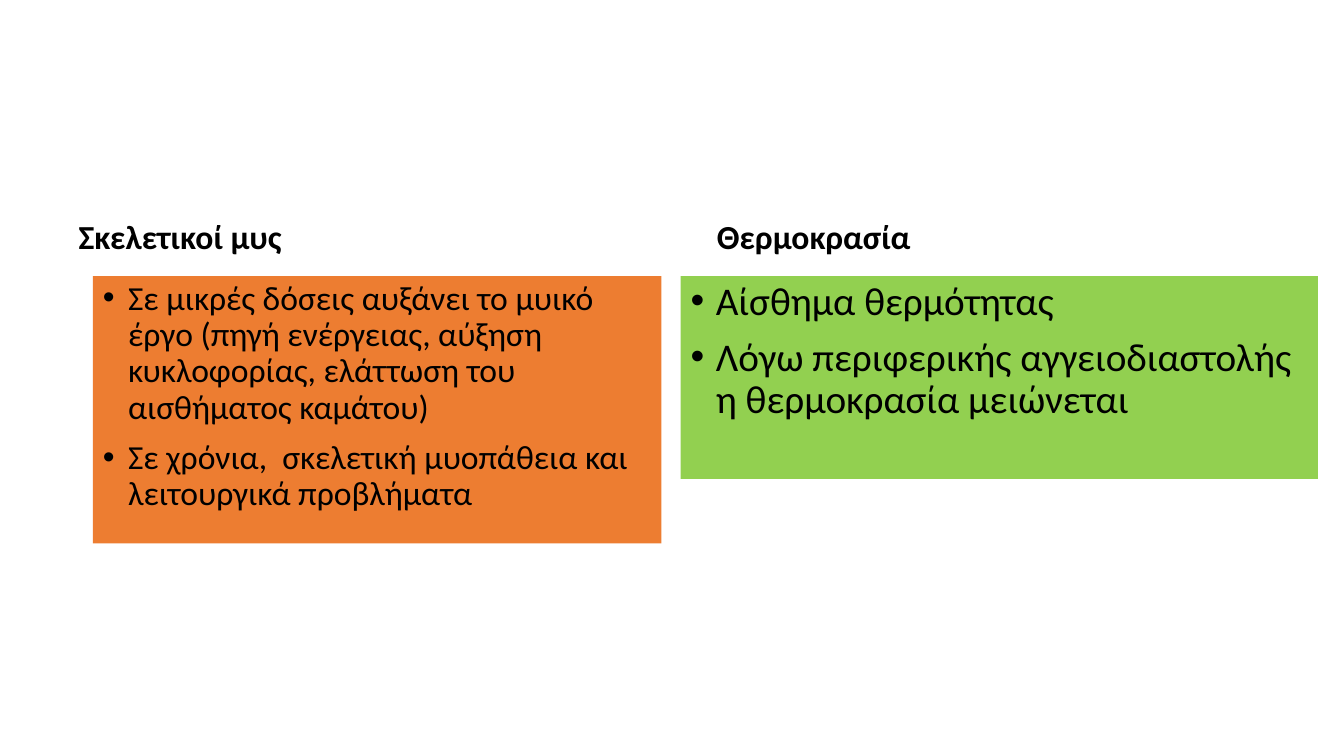
from lxml import etree
from pptx import Presentation
from pptx.dml.color import RGBColor
from pptx.enum.text import MSO_ANCHOR, MSO_AUTO_SIZE, PP_ALIGN
from pptx.oxml.ns import qn
from pptx.util import Inches, Pt

BLACK = RGBColor(0x00, 0x00, 0x00)
ORANGE = RGBColor(0xED, 0x7D, 0x31)
GREEN = RGBColor(0x92, 0xD0, 0x50)
TOP, BOTTOM = MSO_ANCHOR.TOP, MSO_ANCHOR.BOTTOM
NO_FIT = MSO_AUTO_SIZE.NONE
LEFT = PP_ALIGN.LEFT
COMPARISON = 4  # layout with two headings and two lists

prs = Presentation()
prs.slide_width, prs.slide_height = Inches(13.33), Inches(7.5)
slide = prs.slides.add_slide(prs.slide_layouts[COMPARISON])

# The slide has no title
title = slide.shapes.title._element
title.getparent().remove(title)


def put_text(idx, box, lines, size, fill=None):
    """Fill a placeholder: a bold heading, or a bulleted list if it has a fill."""
    shape = slide.placeholders[idx]
    shape.left, shape.top, shape.width, shape.height = map(Inches, box)
    if fill is not None:
        shape.fill.solid()
        shape.fill.fore_color.rgb = fill
    frame = shape.text_frame
    frame.text = "\n".join(lines)
    frame.word_wrap = True
    frame.auto_size = NO_FIT
    frame.vertical_anchor = BOTTOM if fill is None else TOP
    for par in frame.paragraphs:
        par.alignment = LEFT
        par.line_spacing = 0.9
        par.space_before = Pt(10)
        font = par.runs[0].font
        font.name, font.size, font.bold = "Calibri", Pt(size), fill is None
        font.color.rgb = BLACK
        # Bullet and hanging indent
        props = par._p.get_or_add_pPr()
        indent = Inches(0 if fill is None else 0.25)
        props.set("marL", str(indent))
        props.set("indent", str(-indent))
        if fill is not None:
            etree.SubElement(props, qn("a:buFont"), typeface="Arial")
            etree.SubElement(props, qn("a:buChar"), char="•")


# Left column: skeletal muscle
put_text(1, (0.68, 1.98, 5.64, 0.62), ["Σκελετικοί μυς"], 24)
put_text(2, (0.92, 2.74, 5.64, 2.65), [
    "Σε μικρές δόσεις αυξάνει το μυικό έργο (πηγή ενέργειας, "
    "αύξηση κυκλοφορίας, ελάττωση του αισθήματος καμάτου)",
    "Σε χρόνια,  σκελετική μυοπάθεια και λειτουργικά προβλήματα",
], 24, ORANGE)

# Right column: temperature
put_text(3, (7.01, 1.84, 5.41, 0.76), ["Θερμοκρασία"], 24)
put_text(4, (6.75, 2.74, 6.32, 2.01), [
    "Αίσθημα θερμότητας",
    "Λόγω περιφερικής αγγειοδιαστολής  η θερμοκρασία μειώνεται",
], 28, GREEN)

prs.save("out.pptx")
